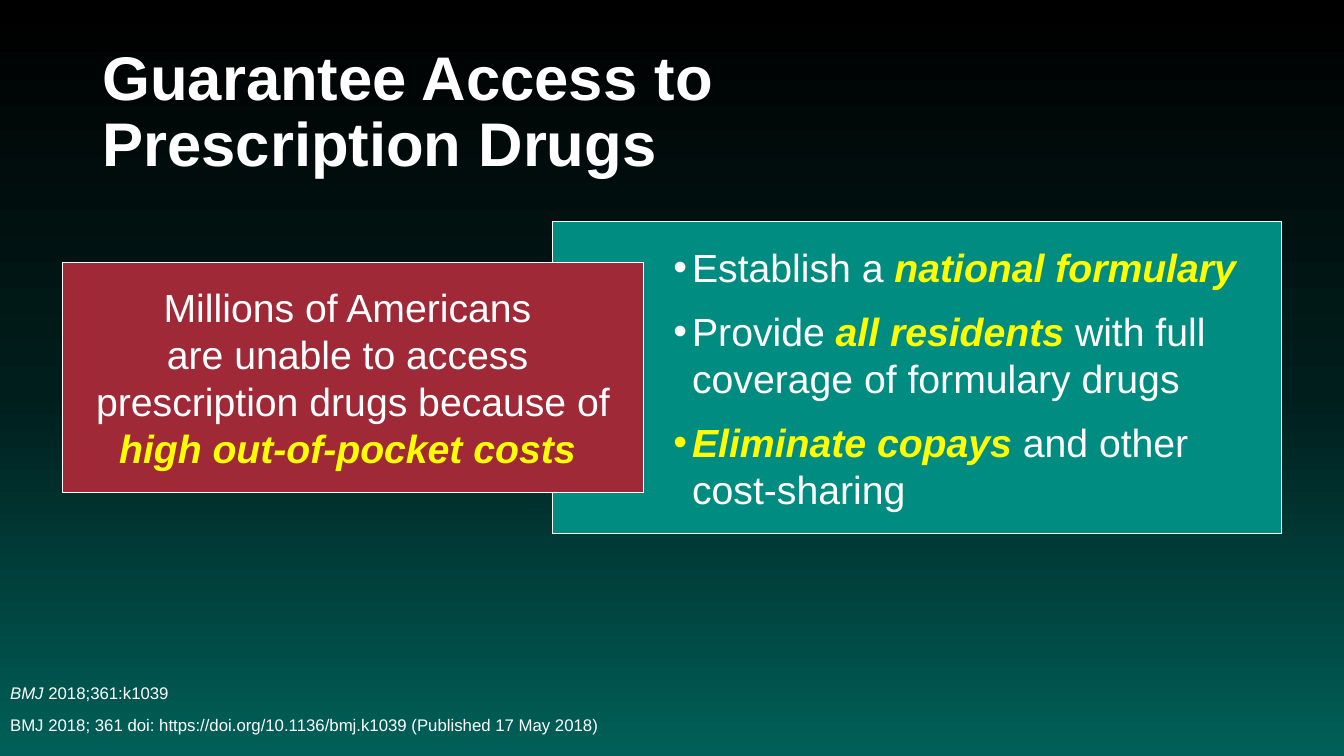
"""Build a slide on guaranteed access to prescription drugs."""
from copy import deepcopy

from lxml.etree import SubElement
from pptx import Presentation
from pptx.dml.color import RGBColor as Rgb
from pptx.enum.shapes import MSO_SHAPE as Shape
from pptx.enum.text import MSO_ANCHOR as Anchor, MSO_AUTO_SIZE as Auto, PP_ALIGN as Align
from pptx.oxml.ns import qn
from pptx.util import Pt

HUES = {
    "white": "FFFFFF", "yellow": "FFFF00", "teal": "008C81", "red": "9F2936",
    "top": "000000", "mid": "001E1C", "base": "006059",
}
COSTS = [
    [("Millions of Americans ", "")],
    [("are unable to access ", "")],
    [("prescription drugs because of ", ""), ("high out-of-pocket costs ", "key")],
]
PLANS = [
    [("Establish a ", ""), ("national formulary", "key")],
    [("Provide ", ""), ("all residents", "key"), (" with full coverage of formulary drugs", "")],
    [("Eliminate copays ", "key"), ("and other cost-sharing", "")],
]
CITES = [
    [("BMJ", "slant"), (" 2018;361:k1039", "")],
    [("BMJ 2018; 361 doi: https://doi.org/10.1136/bmj.k1039 (Published 17 May 2018)", "")],
]


def hue(name):
    return Rgb.from_string(HUES[name])


def place(shape, left, top, width, height):
    shape.left, shape.top = Pt(left), Pt(top)
    shape.width, shape.height = Pt(width), Pt(height)


def style(font, size, bold=False):
    font.name, font.size, font.bold = "Arial", Pt(size), bold
    font.color.rgb = hue("white")


def indent(para, left, mark=None):
    props = para._p.get_or_add_pPr()
    props.set("marL", str(Pt(left)))
    props.set("indent", str(-Pt(left)))
    if mark:
        SubElement(props, qn("a:buFont")).set("typeface", "Arial")
        SubElement(props, qn("a:buChar")).set("char", mark)
    else:
        SubElement(props, qn("a:buNone"))


def write(frame, rows, size, align=Align.LEFT, left=0, mark=None, before=0, after=0, lines=1.0):
    frame.word_wrap = True
    frame.auto_size = Auto.NONE
    frame.vertical_anchor = Anchor.MIDDLE
    for i, row in enumerate(rows):
        para = frame.add_paragraph() if i else frame.paragraphs[0]
        indent(para, left, mark)
        para.alignment, para.line_spacing = align, lines
        para.space_before = Pt(before if i else 0)
        para.space_after = Pt(after)
        style(para.font, size)
        for text, kind in row:
            run = para.add_run()
            run.text = text
            if kind:
                run.font.italic = True
            if kind == "key":
                run.font.bold = True
                run.font.color.rgb = hue("yellow")


def panel(slide, box, fill, inset):
    shape = slide.shapes.add_shape(Shape.RECTANGLE, *map(Pt, box))
    shape.shadow.inherit = False
    shape.fill.solid()
    shape.fill.fore_color.rgb = hue(fill)
    shape.line.color.rgb = hue("white")
    shape.line.width = Pt(0.75)
    frame = shape.text_frame
    frame.margin_left = Pt(inset)
    frame.margin_top = frame.margin_right = frame.margin_bottom = Pt(14.4)
    return frame


def shade(slide):
    fill = slide.background.fill
    fill.gradient()
    fill.gradient_angle = 270
    first = slide.element.find(".//" + qn("a:gs"))
    first.addnext(deepcopy(first))
    for stop, name, pos in zip(fill.gradient_stops, ("top", "mid", "base"), (0, 0.52, 1)):
        stop.color.rgb = hue(name)
        stop.position = pos


def head(slide):
    title = slide.shapes.title
    place(title, 66, 28.8, 828, 104.4)
    frame = title.text_frame
    frame.word_wrap = True
    frame.auto_size = Auto.NONE
    frame.vertical_anchor = Anchor.MIDDLE
    para = frame.paragraphs[0]
    para.text = "Guarantee Access to \vPrescription Drugs"
    para.alignment, para.line_spacing = Align.LEFT, 0.9
    style(para.font, 44, True)


def main():
    deck = Presentation()
    deck.slide_width, deck.slide_height = Pt(960), Pt(540)
    slide = deck.slides.add_slide(deck.slide_layouts[1])
    shade(slide)
    head(slide)
    cite = slide.placeholders[1]
    place(cite, 0, 474, 648, 66)
    write(cite.text_frame, CITES, 12, before=10, lines=0.9)
    plan = panel(slide, (394.5, 158.4, 520.8, 223), "teal", 86.4)
    write(plan, PLANS, 28, left=13.5, mark="•", after=12)
    cost = panel(slide, (44.6, 187.4, 415, 164.6), "red", 14.4)
    write(cost, COSTS, 28, Align.CENTER)
    deck.save("out.pptx")


if __name__ == "__main__":
    main()
